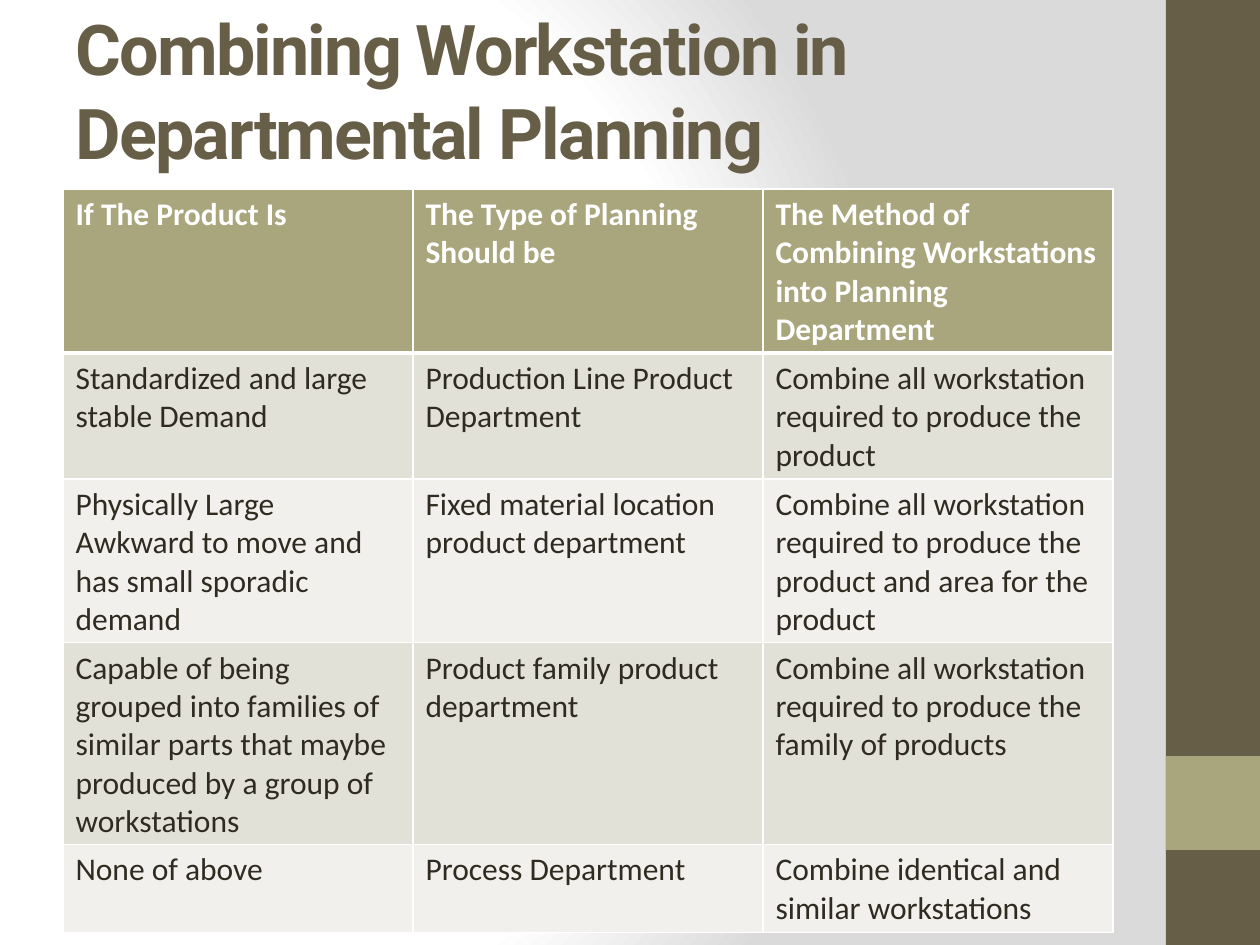
from lxml.etree import SubElement
from pptx import Presentation
from pptx.dml.color import RGBColor
from pptx.enum.shapes import MSO_SHAPE as Shape
from pptx.enum.text import MSO_ANCHOR as Anchor
from pptx.oxml.ns import qn
from pptx.util import Emu, Pt

PX_PER_INCH = 126
WHITE = RGBColor(0xFF, 0xFF, 0xFF)
SILVER = RGBColor(0xDA, 0xDA, 0xDA)
BROWN = RGBColor(0x67, 0x5E, 0x47)
OLIVE = RGBColor(0xA9, 0xA5, 0x7C)
INK = RGBColor(0x2F, 0x2B, 0x20)
BANDS = (RGBColor(0xE2, 0xE1, 0xD7), RGBColor(0xF1, 0xF0, 0xEC))

ROWS = [
    ("If The Product Is", "The Type of Planning Should be",
     "The Method of Combining Workstations into Planning Department"),
    ("Standardized and large stable Demand", "Production Line Product Department",
     "Combine all workstation required to produce the product"),
    ("Physically Large Awkward to move and has small sporadic demand",
     "Fixed material location product department",
     "Combine all workstation required to produce the product and area for the product"),
    ("Capable of being grouped into families of similar parts that maybe produced "
     "by a group of workstations",
     "Product family product department",
     "Combine all workstation required to produce the family of products"),
    ("None of above", "Process Department",
     "Combine identical and similar workstations"),
]
ROW_HEIGHTS = (135, 87, 161, 166, 87)


def px(length):
    return Emu(round(length * 914400 / PX_PER_INCH))


def write(frame, text, *, font, size, color, bold=False, spacing=None):
    """Put text in a frame; spacing is in hundredths of a point."""
    span = frame.paragraphs[0].add_run()
    span.text = text
    span.font.name = font
    span.font.size = Pt(size)
    span.font.bold = bold
    span.font.color.rgb = color
    if spacing is not None:
        span.font._element.set("spc", str(spacing))


def add_solid(parent, color):
    fill = SubElement(parent, qn("a:solidFill"))
    SubElement(fill, qn("a:srgbClr"), val=str(color))


class SlideBuilder:
    def __init__(self, page, heading_font="Roboto", body_font="Calibri"):
        self.page = page
        self.heading_font = heading_font
        self.body_font = body_font

    def background(self, stops, focus):
        """Fill the page with a circular gradient around the focus rectangle."""
        self.page.background.fill.gradient()
        gradient = self.page.element.find(".//" + qn("a:gradFill"))
        for child in list(gradient):
            gradient.remove(child)
        stop_list = SubElement(gradient, qn("a:gsLst"))
        for percent, color in stops:
            stop = SubElement(stop_list, qn("a:gs"), pos=str(percent * 1000))
            SubElement(stop, qn("a:srgbClr"), val=str(color))
        route = SubElement(gradient, qn("a:path"), path="circle")
        edges = {side: str(value * 1000) for side, value in zip("ltrb", focus)}
        SubElement(route, qn("a:fillToRect"), **edges)

    def block(self, left, top, width, height, color):
        shape = self.page.shapes.add_shape(
            Shape.RECTANGLE, px(left), px(top), px(width), px(height))
        shape.shadow.inherit = False
        shape.fill.solid()
        shape.fill.fore_color.rgb = color
        shape.line.fill.background()

    def title(self, text, left, top, width, height):
        box = self.page.shapes.add_textbox(px(left), px(top), px(width), px(height))
        frame = box.text_frame
        frame.word_wrap = True
        frame.vertical_anchor = Anchor.MIDDLE
        write(frame, text, font=self.heading_font, size=40, color=BROWN,
              bold=True, spacing=-100)

    def table(self, rows, heights, left, top, width, height):
        holder = self.page.shapes.add_table(
            len(rows), len(rows[0]), px(left), px(top), px(width), px(height))
        grid = holder.table
        for row, row_height in zip(grid.rows, heights):
            row.height = px(row_height)
        holder.height = px(height)
        for r, texts in enumerate(rows):
            for c, text in enumerate(texts):
                self.cell(grid.cell(r, c), text, r, len(rows))

    def cell(self, cell, text, row, row_count):
        header = row == 0
        write(cell.text_frame, text, font=self.body_font, size=18,
              color=WHITE if header else INK, bold=header)
        top = 3 if row == 1 else 1
        bottom = 3 if header and row_count > 1 else 1
        for side, points in (("L", 1), ("R", 1), ("T", top), ("B", bottom)):
            line = SubElement(cell._tc.get_or_add_tcPr(), qn(f"a:ln{side}"),
                              w=str(Pt(points)))
            add_solid(line, WHITE)
        cell.fill.solid()
        cell.fill.fore_color.rgb = OLIVE if header else BANDS[(row - 1) % 2]


def main():
    deck = Presentation()
    deck.slide_width, deck.slide_height = px(1260), px(945)
    builder = SlideBuilder(deck.slides.add_slide(deck.slide_layouts[6]))
    builder.background([(0, WHITE), (75, WHITE), (100, SILVER)], (20, 50, 100, 50))
    builder.block(1166, 0, 94, 945, BROWN)
    builder.block(1166, 756, 94, 94, OLIVE)
    builder.title("Combining Workstation in Departmental Planning", 63, 10, 1050, 158)
    builder.table(ROWS, ROW_HEIGHTS, 63, 189, 1050, 743)
    deck.save("out.pptx")


if __name__ == "__main__":
    main()
